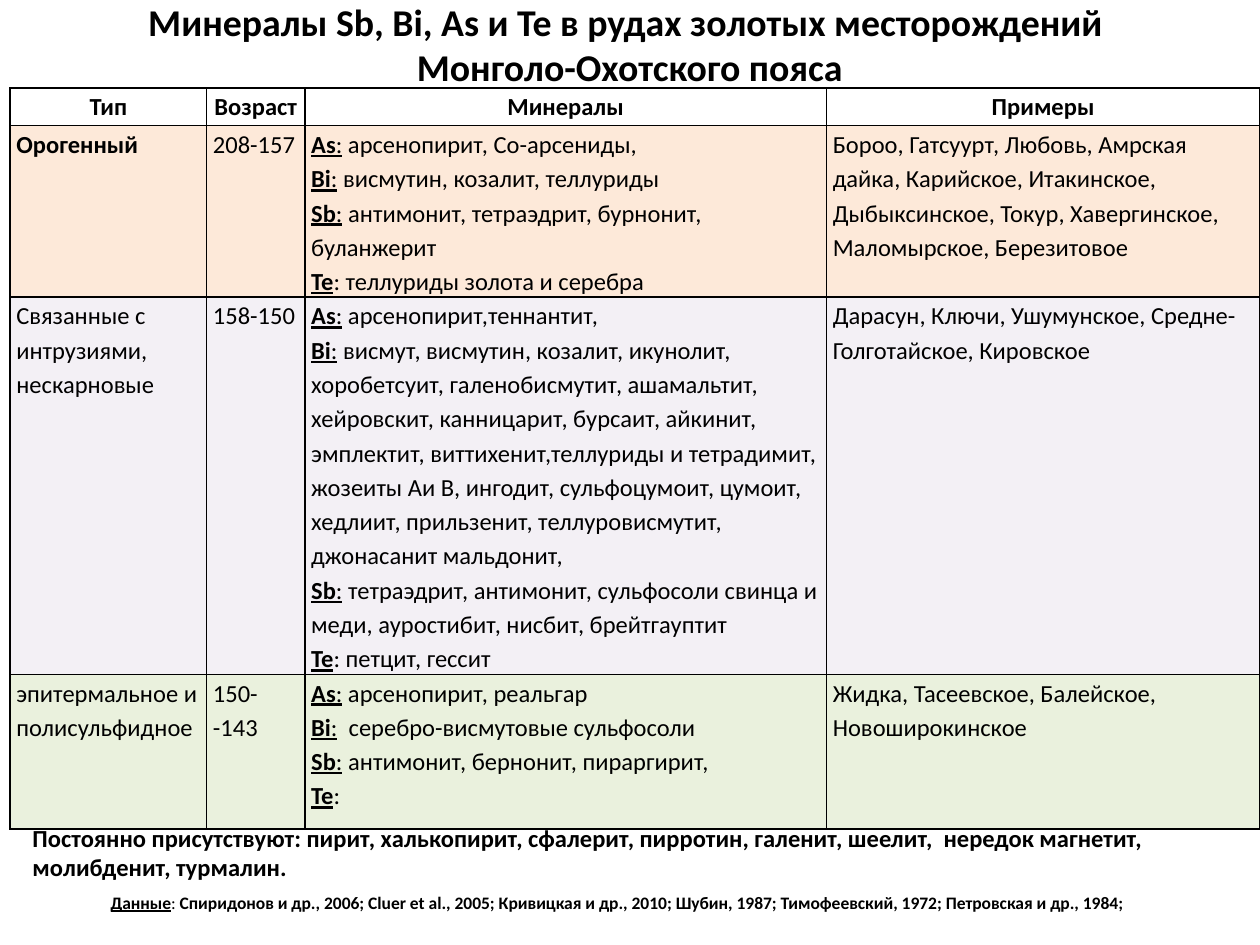
"""Build a slide on Sb, Bi, As and Te minerals in gold ores of the Mongol-Okhotsk belt."""
import typing

import lxml.etree
import pptx
import pptx.dml.color
import pptx.enum.text
import pptx.oxml.ns
import pptx.slide
import pptx.table
import pptx.text.text
import pptx.util

Color = pptx.dml.color.RGBColor
BLACK = Color(0x00, 0x00, 0x00)
PEACH = Color(0xFC, 0xD5, 0xB5)
LILAC = Color(0xE6, 0xE0, 0xEC)
GREEN = Color(0xD7, 0xE4, 0xBD)
FONT = "Calibri"
WIDE = pptx.util.Inches(10)
HIGH = pptx.util.Inches(7.5)
COLS = (1.56, 0.78, 4.14, 3.44)
ROWS = (0.3, 1.36, 2.99, 1.23)
HEADS = ("Тип", "Возраст", "Минералы", "Примеры")
MARKS = ("As", "Bi", "Sb", "Te")


class Box(typing.NamedTuple):
    """Place and size as shares of the slide."""

    left: float
    top: float
    width: float
    height: float

    def place(self) -> tuple[int, int, int, int]:
        """Return the lengths in slide units."""
        return (round(self.left * WIDE), round(self.top * HIGH),
                round(self.width * WIDE), round(self.height * HIGH))


class Span(typing.NamedTuple):
    """A run of text with its emphasis."""

    text: str
    bold: bool = False
    under: bool = False


class Ore(typing.NamedTuple):
    """A deposit type, one table row."""

    kind: str
    age: str
    lists: tuple[str, str, str, str]
    sites: str
    color: Color
    alpha: int
    bold: bool = False


TITLE = Box(0, 0, 1, 0.093)
TABLE = Box(0.008, 0.093, 0.992, 0.784)
NOTE = Box(0.016, 0.864, 1, 0.076)
CREDIT = Box(0.078, 0.937, 1, 0.036)
ORES = (
    Ore("Орогенный", "208-157",
        ("арсенопирит, Со-арсениды,",
         "висмутин, козалит, теллуриды",
         "антимонит, тетраэдрит, бурнонит, буланжерит",
         " теллуриды золота и серебра"),
        "Бороо, Гатсуурт, Любовь, Амрская дайка, Карийское, Итакинское, "
        "Дыбыксинское, Токур, Хавергинское, Маломырское, Березитовое",
        PEACH, 51, True),
    Ore("Связанные с интрузиями, нескарновые", "158-150",
        ("арсенопирит,теннантит,",
         "висмут, висмутин, козалит, икунолит, хоробетсуит, галенобисмутит, "
         "ашамальтит, хейровскит, канницарит, бурсаит, айкинит, эмплектит, "
         "виттихенит,теллуриды и тетрадимит, жозеиты Аи В, ингодит, "
         "сульфоцумоит, цумоит, хедлиит, прильзенит, теллуровисмутит, "
         "джонасанит мальдонит,",
         "тетраэдрит, антимонит, сульфосоли свинца и меди, ауростибит, "
         "нисбит, брейтгауптит",
         " петцит, гессит"),
        "Дарасун, Ключи, Ушумунское, Средне-Голготайское, Кировское",
        LILAC, 48),
    Ore("эпитермальное и полисульфидное", "150--143",
        ("арсенопирит, реальгар",
         " серебро-висмутовые сульфосоли",
         "антимонит, бернонит, пираргирит,",
         ""),
        "Жидка, Тасеевское, Балейское, Новоширокинское",
        GREEN, 51),
)


def write(frame: pptx.text.text.TextFrame, lines: list[list[Span]], size: float,
          center: bool = False, space: float = 1) -> None:
    """Fill a text frame, one paragraph per line of spans."""
    for num, spans in enumerate(lines):
        para = frame.add_paragraph() if num else frame.paragraphs[0]
        if center:
            para.alignment = pptx.enum.text.PP_ALIGN.CENTER
        para.line_spacing = space
        para.font.name = FONT
        para.font.size = pptx.util.Pt(size)
        para.font.color.rgb = BLACK
        para.font.bold = spans[0].bold if len(spans) == 1 else None
        for span in spans:
            for part, text in enumerate(span.text.split("\n")):
                if part:
                    para.add_line_break()
                run = para.add_run()
                run.text = text
                if len(spans) > 1:
                    run.font.bold = span.bold
                    run.font.underline = span.under


def split(lists: tuple[str, str, str, str]) -> list[list[Span]]:
    """Put an element mark before each mineral list."""
    lines = [[Span(mark, True, True), Span(":", under=True), Span(" " + text)]
             for mark, text in zip(MARKS[:3], lists)]
    return lines + [[Span(MARKS[3], True, True), Span(":" + lists[3])]]


def frame_cell(cell: pptx.table._Cell) -> None:
    """Set the margins and black borders of a cell."""
    cell.margin_left = cell.margin_right = pptx.util.Inches(0.05)
    cell.margin_top = cell.margin_bottom = 0
    props = cell._tc.get_or_add_tcPr()
    qn = pptx.oxml.ns.qn
    for side in ("a:lnL", "a:lnR", "a:lnT", "a:lnB"):
        line = lxml.etree.SubElement(props, qn(side), w=str(pptx.util.Pt(1)))
        fill = lxml.etree.SubElement(line, qn("a:solidFill"))
        lxml.etree.SubElement(fill, qn("a:srgbClr"), val=str(BLACK))


def tint(cell: pptx.table._Cell, color: Color, alpha: int) -> None:
    """Fill a cell with a see-through color, alpha in percent."""
    cell.fill.solid()
    cell.fill.fore_color.rgb = color
    qn = pptx.oxml.ns.qn
    tone = cell._tc.tcPr.find(qn("a:solidFill")).find(qn("a:srgbClr"))
    lxml.etree.SubElement(tone, qn("a:alpha"), val=str(alpha * 1000))


def add_ores(slide: pptx.slide.Slide) -> None:
    """Draw the table of deposit types."""
    table = slide.shapes.add_table(len(ROWS), len(COLS), *TABLE.place()).table
    table.first_row = table.horz_banding = False
    for col, width in zip(table.columns, COLS):
        col.width = pptx.util.Inches(width)
    for row, height in zip(table.rows, ROWS):
        row.height = pptx.util.Inches(height)
    for cell in table.iter_cells():
        frame_cell(cell)
    for cell, head in zip(table.rows[0].cells, HEADS):
        cell.fill.background()
        write(cell.text_frame, [[Span(head, True)]], 14, True, 1.15)
    for num, ore in enumerate(ORES, 1):
        texts = ([[Span(ore.kind, ore.bold)]], [[Span(ore.age)]],
                 split(ore.lists), [[Span(ore.sites)]])
        for cell, lines in zip(table.rows[num].cells, texts):
            tint(cell, ore.color, ore.alpha)
            write(cell.text_frame, lines, 14, space=1.15)


def add_note(slide: pptx.slide.Slide, box: Box, spans: list[Span], size: float) -> None:
    """Draw a wrapped line of text below the table."""
    frame = slide.shapes.add_textbox(*box.place()).text_frame
    frame.word_wrap = True
    write(frame, [spans], size)


def main() -> None:
    """Build and save the slide."""
    deck = pptx.Presentation()
    deck.slide_width, deck.slide_height = WIDE, HIGH
    slide = deck.slides.add_slide(deck.slide_layouts[5])
    title = slide.shapes.title
    title.left, title.top, title.width, title.height = TITLE.place()
    frame = title.text_frame
    frame.auto_size = pptx.enum.text.MSO_AUTO_SIZE.NONE
    frame.vertical_anchor = pptx.enum.text.MSO_ANCHOR.MIDDLE
    write(frame, [[Span("Минералы Sb, Bi, As и Te в рудах золотых месторождений "
                        "\nМонголо-Охотского пояса", True)]], 21.6, True)
    add_ores(slide)
    add_note(slide, NOTE, [Span(
        "Постоянно присутствуют: пирит, халькопирит, сфалерит, пирротин, галенит, "
        "шеелит,  нередок магнетит, молибденит, турмалин.", True)], 14)
    add_note(slide, CREDIT, [Span("Данные", True, True), Span(": "), Span(
        "Спиридонов и др., 2006; Cluer et al., 2005; Кривицкая и др., 2010; "
        "Шубин, 1987; Тимофеевский, 1972; Петровская и др., 1984;", True)], 10)
    deck.save("out.pptx")


if __name__ == "__main__":
    main()
